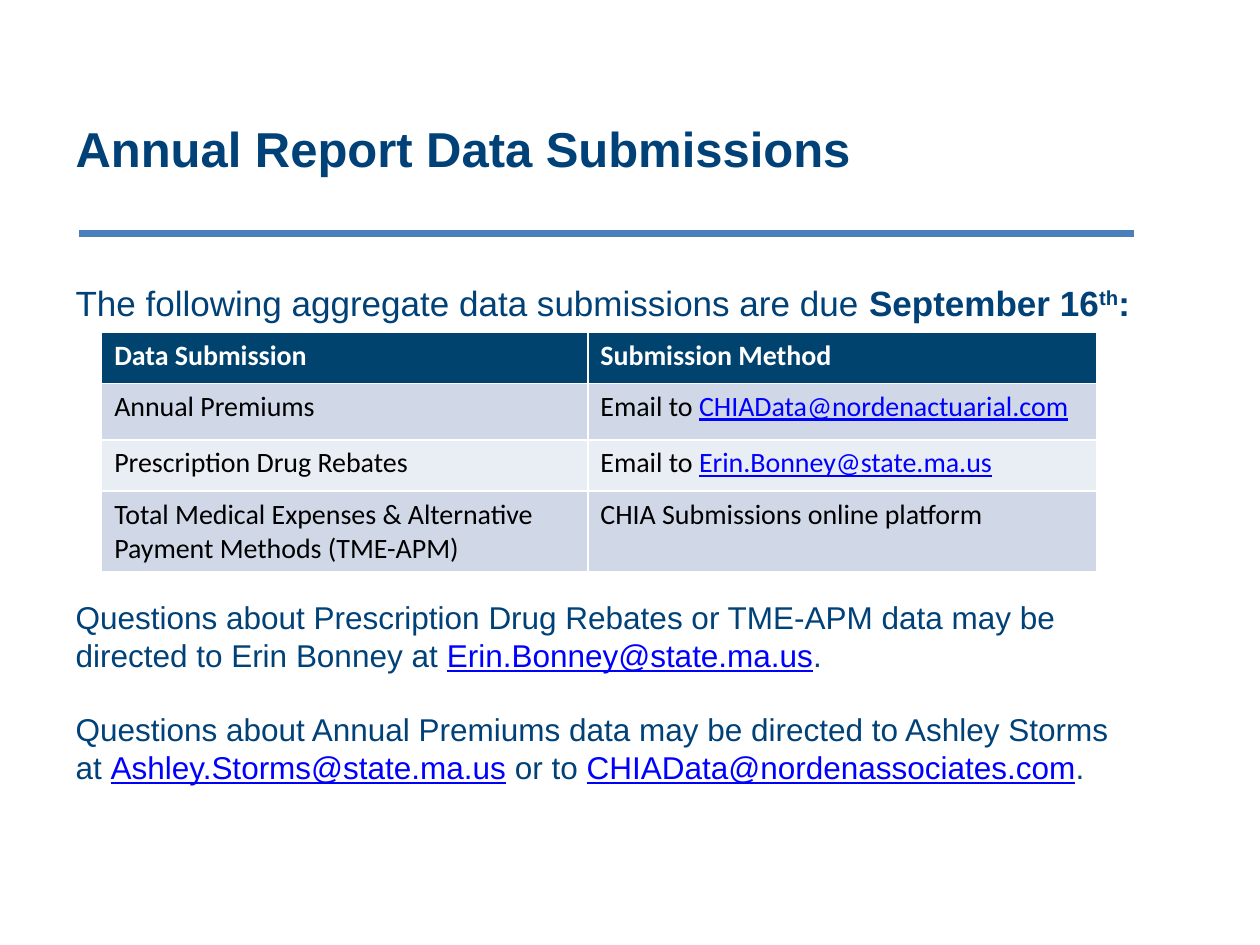
import dataclasses

import pptx
import pptx.dml.color
import pptx.enum.shapes
import pptx.enum.text
import pptx.oxml
import pptx.util
from pptx.util import Cm


@dataclasses.dataclass(frozen=True)
class Theme:
    text_font: str = "Arial"
    table_font: str = "Calibri"
    navy: str = "004178"
    rule: str = "4B7EBC"
    email: str = "0000FF"
    header: str = "00436E"
    white: str = "FFFFFF"
    black: str = "000000"
    bands: tuple = ("D0D8E8", "E9EDF4")
    title_size: int = 28
    lead_size: int = 20
    body_size: int = 18
    table_size: int = 16


def rgb(value):
    return pptx.dml.color.RGBColor.from_string(value)


class SlideBuilder:
    """Holds the style and the slide being built."""

    def __init__(self, slide, theme):
        self.slide = slide
        self.theme = theme

    def add_run(self, paragraph, text, font, size, color, style=""):
        """Style is "", "bold", "superscript" (also bold) or "email"."""
        run = paragraph.add_run()
        run.text = text
        run.font.name = font
        run.font.size = pptx.util.Pt(size)
        run.font.bold = style in ("bold", "superscript")
        run.font.color.rgb = rgb(self.theme.email if style == "email" else color)
        if style == "email":
            run.font.underline = True
        if style == "superscript":
            run._r.get_or_add_rPr().set("baseline", "30000")

    def place(self, shape, left, top, width, height):
        shape.left, shape.top = Cm(left), Cm(top)
        shape.width, shape.height = Cm(width), Cm(height)

    def title(self, text, *box):
        shape = self.slide.shapes.title
        self.place(shape, *box)
        shape.text_frame.vertical_anchor = pptx.enum.text.MSO_ANCHOR.MIDDLE
        paragraph = shape.text_frame.paragraphs[0]
        paragraph.alignment = pptx.enum.text.PP_ALIGN.LEFT
        self.add_run(paragraph, text, self.theme.text_font,
                     self.theme.title_size, self.theme.navy, "bold")

    def body(self, paragraphs, *box):
        """Each paragraph is (space before, type size, runs)."""
        shape = self.slide.placeholders[1]
        self.place(shape, *box)
        frame = shape.text_frame
        frame.vertical_anchor = pptx.enum.text.MSO_ANCHOR.TOP
        for index, (space, size, runs) in enumerate(paragraphs):
            paragraph = frame.add_paragraph() if index else frame.paragraphs[0]
            paragraph.alignment = pptx.enum.text.PP_ALIGN.LEFT
            paragraph.space_before = pptx.util.Pt(space)
            for text, style in runs:
                self.add_run(paragraph, text, self.theme.text_font, size,
                             self.theme.navy, style)

    def rule(self, left, top, width):
        line = self.slide.shapes.add_connector(
            pptx.enum.shapes.MSO_CONNECTOR.STRAIGHT,
            Cm(left), Cm(top), Cm(left + width), Cm(top))
        line.line.color.rgb = rgb(self.theme.rule)
        line.line.width = pptx.util.Pt(4)
        properties = line._element.spPr
        properties.append(properties.makeelement(pptx.oxml.ns.qn("a:effectLst"), {}))

    def table(self, rows, left, top, widths, heights):
        """Each cell is a list of (text, style) runs; the first row is the header."""
        theme = self.theme
        table = self.slide.shapes.add_table(
            len(rows), len(widths), Cm(left), Cm(top),
            Cm(sum(widths)), Cm(sum(heights))).table
        for column, width in zip(table.columns, widths):
            column.width = Cm(width)
        for index, (row, height) in enumerate(zip(rows, heights)):
            table.rows[index].height = Cm(height)
            fill = theme.bands[(index - 1) % 2] if index else theme.header
            color = theme.black if index else theme.white
            for cell, runs in zip(table.rows[index].cells, row):
                cell.fill.solid()
                cell.fill.fore_color.rgb = rgb(fill)
                for text, style in runs:
                    self.add_run(cell.text_frame.paragraphs[0], text,
                                 theme.table_font, theme.table_size, color, style)


def main():
    presentation = pptx.Presentation()
    presentation.slide_width, presentation.slide_height = Cm(25.4), Cm(19.05)
    theme = Theme()
    slide = presentation.slides.add_slide(presentation.slide_layouts[0])
    builder = SlideBuilder(slide, theme)

    # Heading
    builder.rule(1.6, 4.7, 21.26)
    builder.title("Annual Report Data Submissions", 1.27, 1.57, 21.59, 2.82)

    # Deadline above the table, contacts below it
    builder.body([
        (0, theme.lead_size, [
            ("The following aggregate data submissions are due ", ""),
            ("September 16", "bold"), ("th", "superscript"), (":", "bold")]),
        (157, theme.body_size, [
            ("Questions about Prescription Drug Rebates or TME-APM data may be "
             "directed to Erin Bonney at ", ""),
            ("Erin.Bonney@state.ma.us", "email"), (".", "")]),
        (21, theme.body_size, [
            ("Questions about Annual Premiums data may be directed to "
             "Ashley Storms at ", ""),
            ("Ashley.Storms@state.ma.us", "email"), (" or to ", ""),
            ("CHIAData@nordenassociates.com", "email"), (".", "")]),
    ], 1.27, 5.54, 21.84, 11)

    # Submission methods
    builder.table([
        [[("Data Submission", "bold")], [("Submission Method", "bold")]],
        [[("Annual Premiums", "")],
         [("Email to ", ""), ("CHIAData@nordenactuarial.com", "email")]],
        [[("Prescription Drug Rebates", "")],
         [("Email to ", ""), ("Erin.Bonney@state.ma.us", "email")]],
        [[("Total Medical Expenses & Alternative Payment Methods (TME-APM)", "")],
         [("CHIA Submissions online platform", "")]],
    ], 2.05, 6.7, [9.8, 10.26], [1.03, 1.14, 1.03, 1.63])

    presentation.save("out.pptx")


if __name__ == "__main__":
    main()
